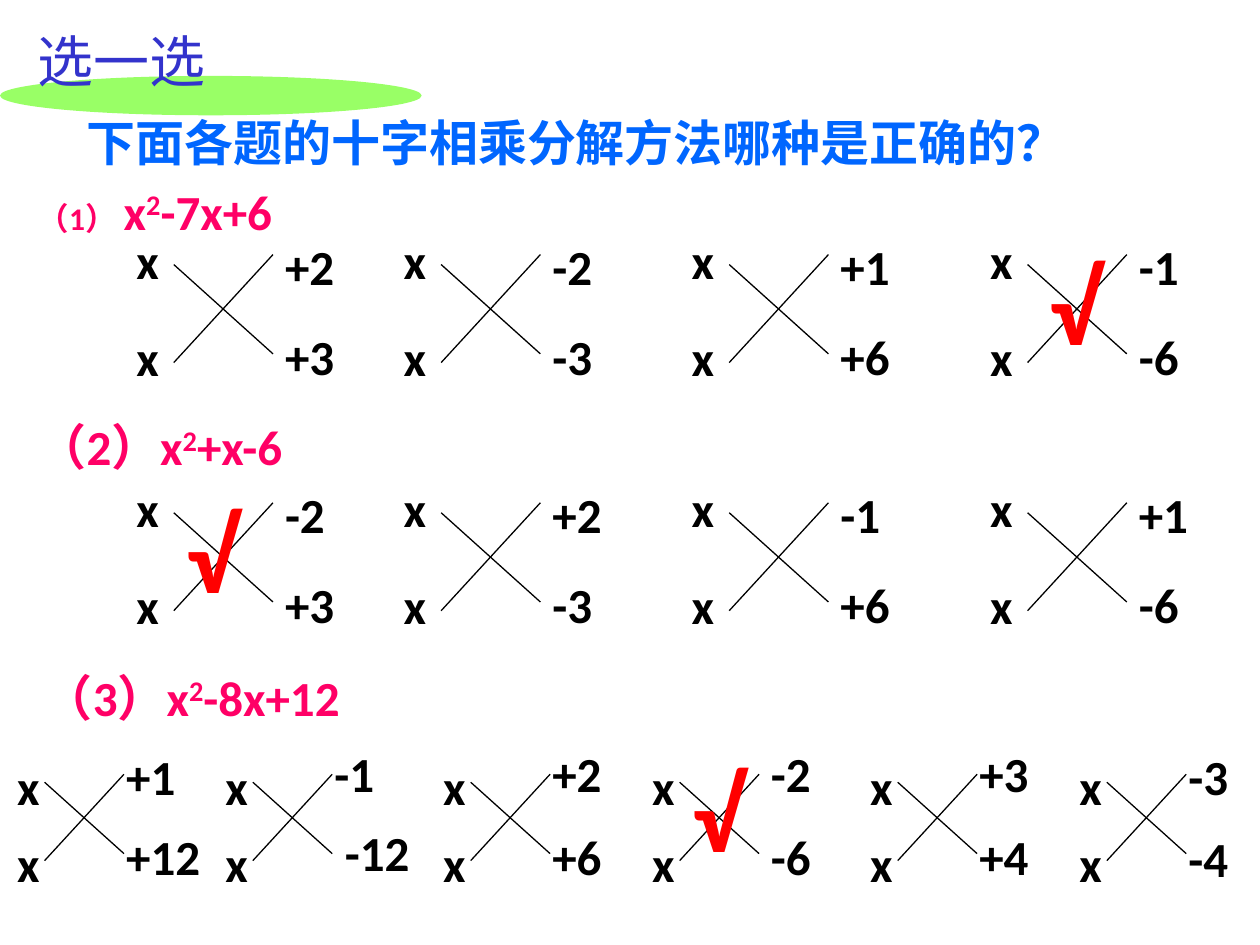
from pptx import Presentation
from pptx.dml.color import RGBColor
from pptx.enum.shapes import MSO_CONNECTOR, MSO_SHAPE
from pptx.enum.text import MSO_ANCHOR, MSO_AUTO_SIZE, PP_ALIGN
from pptx.oxml.ns import qn
from pptx.util import Pt
from lxml import etree

STRAIGHT, OVAL = MSO_CONNECTOR.STRAIGHT, MSO_SHAPE.OVAL
TOP, LEFT, NO_FIT = MSO_ANCHOR.TOP, PP_ALIGN.LEFT, MSO_AUTO_SIZE.NONE

COLORS = {"title": "3333CC", "oval": "99FF66", "question": "0066FF",
          "expression": "FF0066", "term": "000000", "check": "FF0000"}
LATIN, CHINESE = "Calibri", "Noto Sans CJK SC"
TERM_SIZE, CHECK_SIZE = 28, 60
TERM_HEIGHT = 41

# Content
TITLE = "选一选"
QUESTION = "下面各题的十字相乘分解方法哪种是正确的？"

# Each heading: left, top, runs of (text, size, superscript)
HEADINGS = [
    (14.4, 100, [("（1） ", 18, False), ("x", 28, False), ("2", 28, True), ("-7x+6", 28, False)]),
    (14.4, 234.7, [("（2）x", 28, False), ("2", 28, True), ("+x-6", 28, False)]),
    (18, 378, [("（3）x", 28, False), ("2", 28, True), ("-8x+12", 28, False)]),
]

# Each pair: upper term, lower term, then optional nudges (dx, dy) for each
WIDE_LEFTS = [70.8, 223.6, 388.2, 558.7]
NARROW_LEFTS = [2.7, 121.7, 246.2, 365.6, 490.2, 609.7]
EXERCISES = [
    {"top": 128.2, "scale": 1, "lefts": WIDE_LEFTS, "term_at": (85, 3.6, 54.7),
     "pairs": [("+2", "+3"), ("-2", "-3"), ("+1", "+6"), ("-1", "-6")],
     "answer": 3, "check_at": (33.8, 5.8)},
    {"top": 270, "scale": 1, "lefts": WIDE_LEFTS, "term_at": (85, 3.6, 54.7),
     "pairs": [("-2", "+3"), ("+2", "-3"), ("-1", "+6"), ("+1", "-6")],
     "answer": 0, "check_at": (28.8, 5.8)},
    {"top": 428.6, "scale": 0.8, "lefts": NARROW_LEFTS, "term_at": (62.3, -7.4, 40),
     "pairs": [("+1", "+12", (0, 2), (0, 0)), ("-1", "-12", (0, 0), (6, -2)),
               ("+2", "+6"), ("-2", "-6", (5.5, 0), (5.5, 0)),
               ("+3", "+4"), ("-3", "-4", (0, 2), (0, 1.5))],
     "answer": 3, "check_at": (23, -5)},
]

# Cross geometry at full scale, measured from the upper x
LINE_START, LINE_END = 28.5, 85.2
FALLING, RISING = (23, 74), (79, 17.3)
LOWER_X = 55.3


def add_run(paragraph, text, size, color, font=LATIN, bold=True, superscript=False):
    run = paragraph.add_run()
    run.text = text
    run.font.size, run.font.bold, run.font.name = Pt(size), bold, font
    run.font.color.rgb = RGBColor.from_string(COLORS[color])
    properties = run.font._element
    etree.SubElement(properties, qn("a:ea")).set("typeface", font)
    if superscript:
        properties.set("baseline", "30000")


def add_label(slide, left, top, width, height, runs, color, wrap=True):
    label = slide.shapes.add_textbox(Pt(left), Pt(top), Pt(width), Pt(height))
    label.text_frame.word_wrap = wrap
    for text, size, superscript in runs:
        add_run(label.text_frame.paragraphs[0], text, size, color, superscript=superscript)


def add_term(slide, left, top, text, width):
    add_label(slide, left, top, width, TERM_HEIGHT, [(text, TERM_SIZE, False)], "term")


def add_line(slide, x1, y1, x2, y2):
    line = slide.shapes.add_connector(STRAIGHT, Pt(x1), Pt(y1), Pt(x2), Pt(y2))
    line.line.color.rgb = RGBColor.from_string(COLORS["term"])
    line.line.width = Pt(0.75)
    etree.SubElement(line._element.spPr, qn("a:effectLst"))


def add_cross(slide, left, top, scale):
    for start, end in (FALLING, RISING):
        add_line(slide, left + LINE_START * scale, top + start * scale,
                 left + LINE_END * scale, top + end * scale)
    for offset in (0, LOWER_X * scale):
        add_term(slide, left, top + offset, "x", 28)


def add_exercise(slide, exercise):
    top, lefts = exercise["top"], exercise["lefts"]
    term_dx, *term_dys = exercise["term_at"]
    for left, (upper, lower, *nudges) in zip(lefts, exercise["pairs"]):
        add_cross(slide, left, top, exercise["scale"])
        nudges = nudges or [(0, 0), (0, 0)]
        for text, term_dy, (dx, dy) in zip((upper, lower), term_dys, nudges):
            add_term(slide, left + term_dx + dx, top + term_dy + dy, text, 63)
    # Tick over the right answer
    check_dx, check_dy = exercise["check_at"]
    add_label(slide, lefts[exercise["answer"]] + check_dx, top + check_dy, 44.6, 80,
              [("√", CHECK_SIZE, False)], "check", wrap=False)


def main():
    presentation = Presentation()
    presentation.slide_width, presentation.slide_height = Pt(720), Pt(540)
    slide = presentation.slides.add_slide(presentation.slide_layouts[5])

    # Title over a green oval
    oval = slide.shapes.add_shape(OVAL, Pt(0), Pt(43.4), Pt(241), Pt(22.5))
    oval.shadow.inherit = False
    oval.fill.solid()
    oval.fill.fore_color.rgb = RGBColor.from_string(COLORS["oval"])
    oval.line.fill.background()

    title = slide.shapes.title
    title.left, title.top, title.width, title.height = Pt(14.4), Pt(15), Pt(145.5), Pt(39.6)
    slide.shapes._spTree.append(title._element)
    frame = title.text_frame
    frame.auto_size, frame.vertical_anchor, frame.word_wrap = NO_FIT, TOP, False
    frame.margin_top = frame.margin_bottom = 0
    frame.paragraphs[0].alignment = LEFT
    add_run(frame.paragraphs[0], TITLE, 32, "title", CHINESE, bold=False)

    # Question and expressions
    add_label(slide, 42.5, 60.5, 601, TERM_HEIGHT, [(QUESTION, 28, False)], "question")
    for left, top, runs in HEADINGS:
        add_label(slide, left, top, 300, TERM_HEIGHT, runs, "expression")

    for exercise in EXERCISES:
        add_exercise(slide, exercise)

    presentation.save("out.pptx")


if __name__ == "__main__":
    main()
